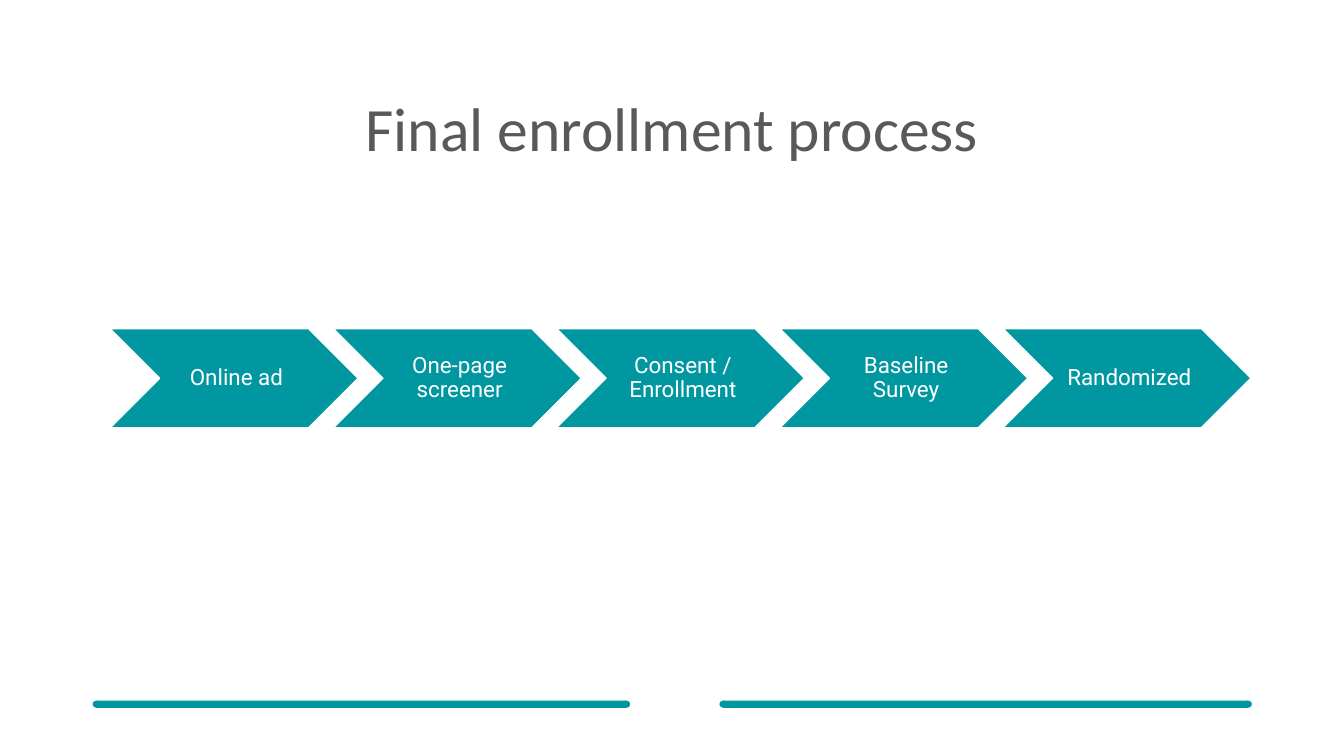
import pptx
import pptx.util
import pptx.dml.color
import pptx.enum.shapes
import pptx.enum.text

Pt = pptx.util.Pt
SHAPE = pptx.enum.shapes.MSO_SHAPE
COLORS = {"teal": "0197A1", "white": "FFFFFF", "title": "595959"}
STEPS = ["Online ad", "One-page screener", "Consent / Enrollment",
         "Baseline Survey", "Randomized"]


def rgb(name):
    return pptx.dml.color.RGBColor.from_string(COLORS[name])


def set_text(sp, text, font, size, color):
    tf = sp.text_frame
    tf.word_wrap = True
    tf.auto_size = pptx.enum.text.MSO_AUTO_SIZE.NONE
    tf.vertical_anchor = pptx.enum.text.MSO_ANCHOR.MIDDLE
    p = tf.paragraphs[0]
    p.alignment = pptx.enum.text.PP_ALIGN.CENTER
    p.line_spacing = 0.9
    r = p.add_run()
    r.text = text
    r.font.name = font
    r.font.size = Pt(size)
    r.font.color.rgb = rgb(color)


def add_filled(s, kind, x, y, w, h, fill="teal", line=None):
    sp = s.shapes.add_shape(kind, Pt(x), Pt(y), Pt(w), Pt(h))
    sp.shadow.inherit = False
    sp.fill.solid()
    sp.fill.fore_color.rgb = rgb(fill)
    if line:
        sp.line.color.rgb = rgb(line)
        sp.line.width = Pt(1)
    else:
        sp.line.fill.background()
    return sp


def add_title(s, x, y, w, h):
    sp = s.shapes.title
    sp.left, sp.top, sp.width, sp.height = Pt(x), Pt(y), Pt(w), Pt(h)
    set_text(sp, "Final enrollment process", "Calibri", 44, "title")


def add_process(s, x, y, w, h):
    # Each chevron overlaps the next by a fixed share of its width
    overlap = 0.1
    step_w = w / (len(STEPS) - overlap * (len(STEPS) - 1))
    for i, step in enumerate(STEPS):
        left = x + i * step_w * (1 - overlap)
        sp = add_filled(s, SHAPE.CHEVRON, left, y, step_w, h, line="white")
        tf = sp.text_frame
        tf.margin_left = Pt(5)
        tf.margin_right = tf.margin_top = tf.margin_bottom = Pt(1.6)
        set_text(sp, step, "Roboto", 16, "white")


def add_footer_bar(s, x, y, w, h):
    # Bar split by a white block, with a round cap at every end
    cap_w, gap_x, gap_w, gap_h = 5.8, 381.6, 68.4, 70.6
    add_filled(s, SHAPE.RECTANGLE, x + cap_w / 2, y, w - cap_w, h)
    add_filled(s, SHAPE.RECTANGLE, x + gap_x, 540 - gap_h, gap_w, gap_h,
               "white", "white")
    inner_left = gap_x - cap_w / 2 - 0.6
    inner_right = gap_x + gap_w - cap_w / 2 + 0.6
    for cap_x in (0, inner_left, inner_right, w - cap_w):
        add_filled(s, SHAPE.OVAL, x + cap_x, y, cap_w, h)


def main():
    prs = pptx.Presentation()
    prs.slide_width, prs.slide_height = Pt(960), Pt(540)
    s = prs.slides.add_slide(prs.slide_layouts[5])
    s.background.fill.solid()
    s.background.fill.fore_color.rgb = rgb("white")
    add_footer_bar(s, 66.2, 500.4, 828, 5.2)
    add_title(s, 66.2, 48.2, 828, 91.4)
    add_process(s, 78.6, 234.8, 815, 70.8)
    prs.save("out.pptx")


if __name__ == "__main__":
    main()
